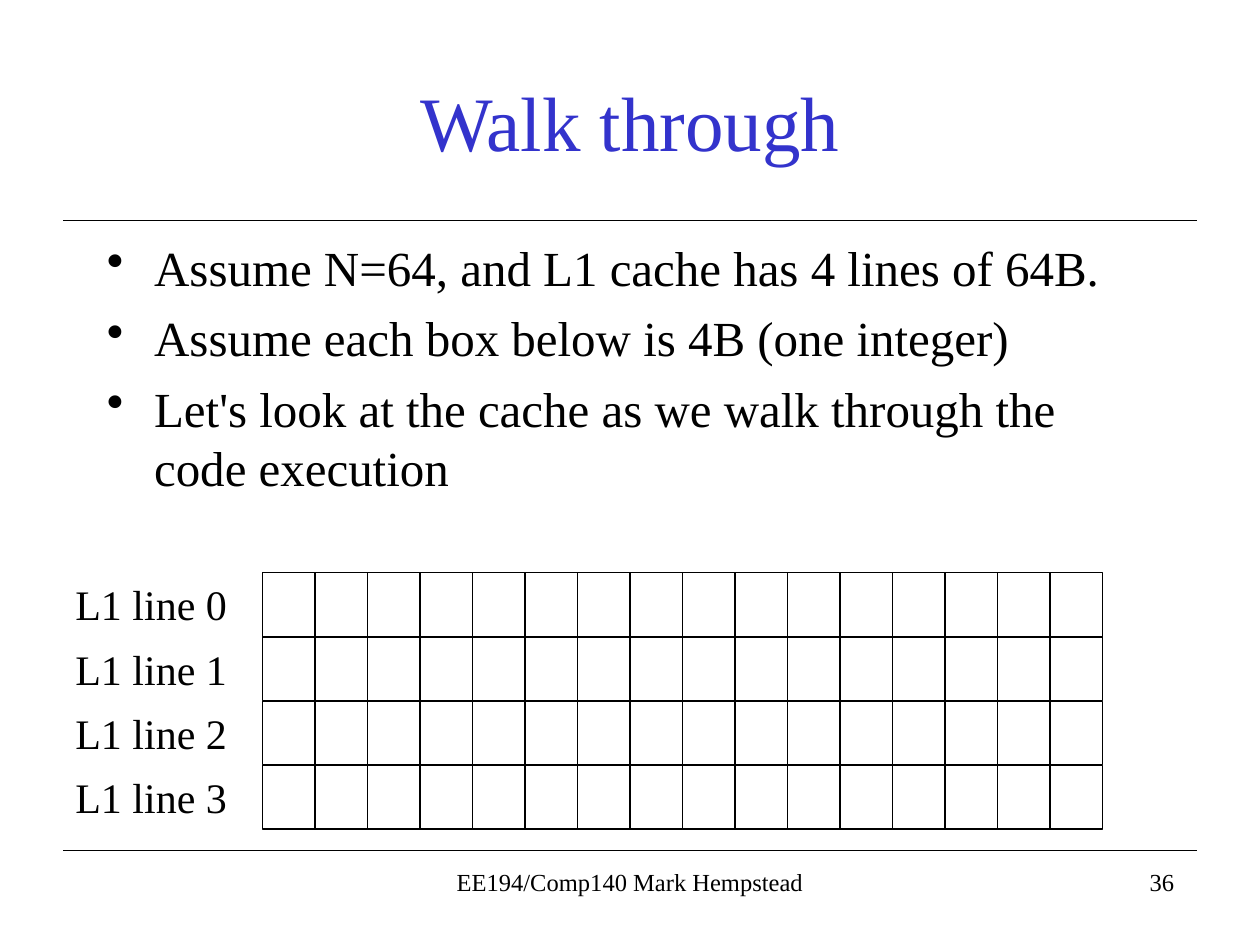
from dataclasses import dataclass

from lxml import etree
from pptx import Presentation
from pptx.dml.color import RGBColor
from pptx.enum.shapes import MSO_CONNECTOR, MSO_SHAPE
from pptx.enum.text import MSO_ANCHOR, PP_ALIGN
from pptx.oxml.ns import qn
from pptx.util import Pt

LEFT, CENTER, RIGHT = PP_ALIGN.LEFT, PP_ALIGN.CENTER, PP_ALIGN.RIGHT
TOP, MIDDLE = MSO_ANCHOR.TOP, MSO_ANCHOR.MIDDLE
STRAIGHT = MSO_CONNECTOR.STRAIGHT
RECTANGLE = MSO_SHAPE.RECTANGLE

COLORS = {"title": "3333CC", "ink": "000000"}
FONT = "Times New Roman"
LINE_WIDTH = 0.75
RULE_LEFT, RULE_RIGHT = 36, 684
RULE_TOPS = (126, 486)
BULLET_INDENT = 27
BULLET_SPACING = 6.8
CACHE_LINES, INTEGERS_PER_LINE = 4, 16
CACHE_LEFT, CACHE_TOP = 150, 327.3
CELL_WIDTH, CELL_HEIGHT, ROW_PITCH = 30, 36.36, 36.7


@dataclass(frozen=True)
class TextBlock:
    text: str
    left: float
    top: float
    width: float
    height: float
    size: float
    align: PP_ALIGN = LEFT
    anchor: MSO_ANCHOR = TOP
    color: str = "ink"
    bulleted: bool = False


TEXT_BLOCKS = [
    TextBlock("Walk through", 54, 24, 612, 90, 44, CENTER, MIDDLE, "title"),
    TextBlock(
        "Assume N=64, and L1 cache has 4 lines of 64B.\n"
        "Assume each box below is 4B (one integer)\n"
        "Let's look at the cache as we walk through the code execution",
        54, 132, 612, 156, 28, bulleted=True,
    ),
    TextBlock("EE194/Comp140 Mark Hempstead", 246, 492, 228, 36, 14, CENTER),
    TextBlock("36", 450, 492, 228, 36, 14, RIGHT),
]


def ink(name: str) -> RGBColor:
    return RGBColor.from_string(COLORS[name])


def add_bullet(para) -> None:
    para.space_before = Pt(BULLET_SPACING)
    properties = para._p.get_or_add_pPr()
    properties.set("marL", str(Pt(BULLET_INDENT)))
    properties.set("indent", str(-Pt(BULLET_INDENT)))
    etree.SubElement(properties, qn("a:buChar")).set("char", "•")


def draw_text(page, block: TextBlock) -> None:
    box = page.shapes.add_textbox(
        Pt(block.left), Pt(block.top), Pt(block.width), Pt(block.height)
    )
    frame = box.text_frame
    frame.word_wrap = True
    frame.vertical_anchor = block.anchor
    frame.text = block.text
    for para in frame.paragraphs:
        para.alignment = block.align
        if block.bulleted:
            add_bullet(para)
        for span in para.runs:
            span.font.name = FONT
            span.font.size = Pt(block.size)
            span.font.color.rgb = ink(block.color)


def draw_rule(page, top: float) -> None:
    rule = page.shapes.add_connector(
        STRAIGHT, Pt(RULE_LEFT), Pt(top), Pt(RULE_RIGHT), Pt(top)
    )
    rule.line.color.rgb = ink("ink")
    rule.line.width = Pt(LINE_WIDTH)
    etree.SubElement(rule._element.spPr, qn("a:effectLst"))


def draw_cache_line(page, number: int) -> None:
    top = CACHE_TOP + number * ROW_PITCH
    draw_text(page, TextBlock(f"L1 line {number}", 36, top, 108, 36, 24))
    group = page.shapes.add_group_shape()
    for column in range(INTEGERS_PER_LINE):
        cell = group.shapes.add_shape(
            RECTANGLE,
            Pt(CACHE_LEFT + column * CELL_WIDTH),
            Pt(top),
            Pt(CELL_WIDTH),
            Pt(CELL_HEIGHT),
        )
        cell.shadow.inherit = False
        cell.fill.background()
        cell.line.color.rgb = ink("ink")
        cell.line.width = Pt(LINE_WIDTH)


def main() -> None:
    deck = Presentation()
    deck.slide_width, deck.slide_height = Pt(720), Pt(540)
    page = deck.slides.add_slide(deck.slide_layouts[6])
    for top in RULE_TOPS:
        draw_rule(page, top)
    for block in TEXT_BLOCKS:
        draw_text(page, block)
    for number in range(CACHE_LINES):
        draw_cache_line(page, number)
    deck.save("out.pptx")


if __name__ == "__main__":
    main()
